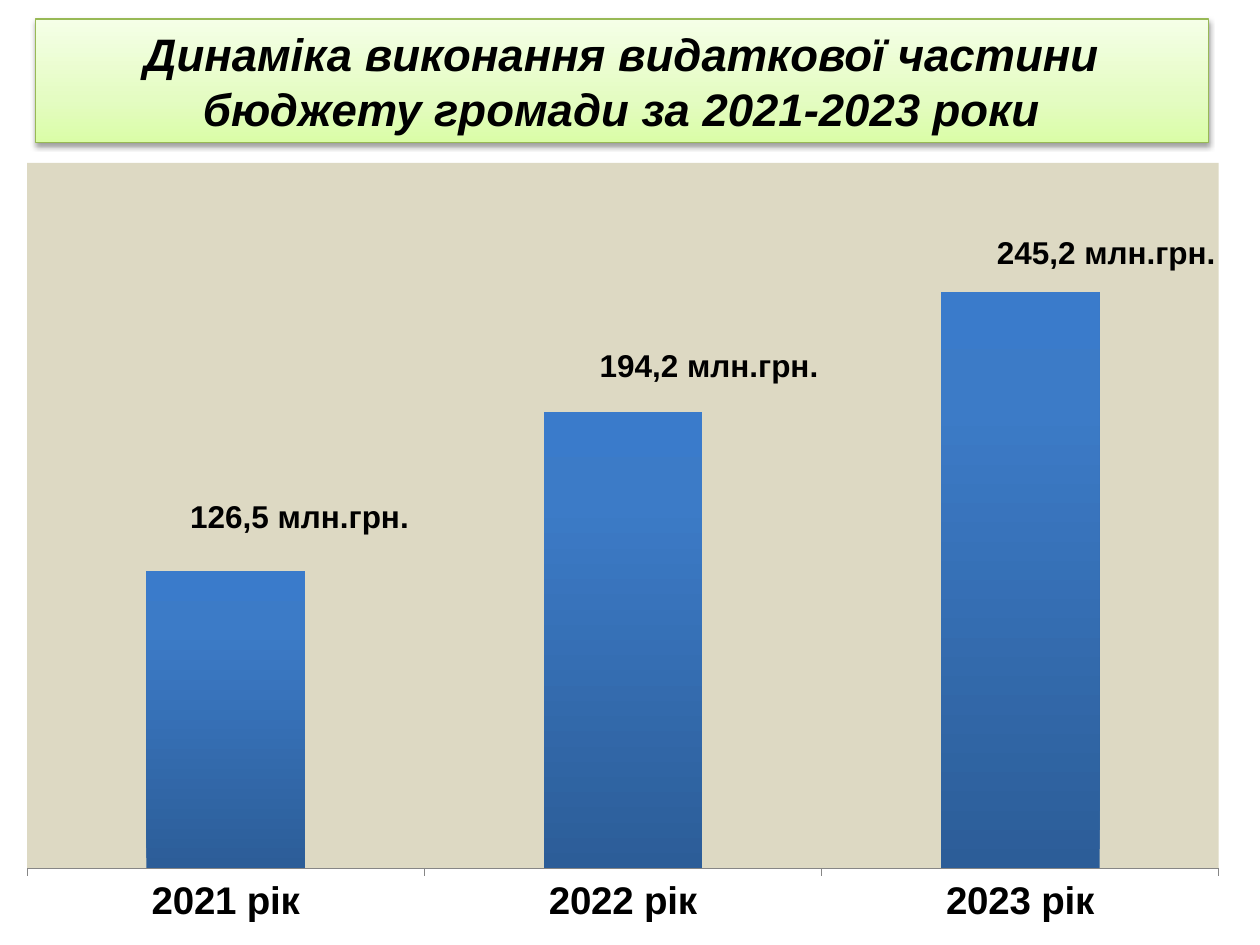
from lxml import etree
from pptx import Presentation
from pptx.chart.data import CategoryChartData
from pptx.dml.color import RGBColor
from pptx.enum.chart import XL_CHART_TYPE, XL_LABEL_POSITION, XL_TICK_MARK
from pptx.enum.shapes import MSO_SHAPE
from pptx.enum.text import MSO_ANCHOR, MSO_AUTO_SIZE, PP_ALIGN
from pptx.oxml import parse_xml
from pptx.oxml.ns import nsdecls, qn
from pptx.util import Inches, Pt

COLUMN = XL_CHART_TYPE.COLUMN_CLUSTERED
OUTSIDE_END = XL_LABEL_POSITION.OUTSIDE_END
TICK_OUT = XL_TICK_MARK.OUTSIDE
RECT = MSO_SHAPE.RECTANGLE
CENTER = PP_ALIGN.CENTER
MIDDLE = MSO_ANCHOR.MIDDLE
GROW = MSO_AUTO_SIZE.SHAPE_TO_FIT_TEXT

COLORS = {"text": "000000", "plot": "DDD9C3", "axis": "868686", "border": "98B955"}
TITLE_STOPS = [(0, "DAFDA7"), (35, "E4FCC2"), (100, "F5FFE7")]
BAR_STOPS = [(0, "2C5D98"), (80, "3C7BC7"), (100, "3A7BCB")]
# year, value, label, label shift as shares of the chart's width and height
YEARS = [("2021 рік", 126.5, "126,5 млн.грн.", 0.06, -0.04),
         ("2022 рік", 194.2, "194,2 млн.грн.", 0.07, -0.03),
         ("2023 рік", 245.2, "245,2 млн.грн.", 0.07, -0.02)]


def set_gradient(fill, sp_pr, stops):
    """Fill from the bottom edge upwards."""
    fill.gradient()
    fill.gradient_angle = 90
    gs_list = sp_pr.find(".//" + qn("a:gsLst"))
    for gs in list(gs_list):
        gs_list.remove(gs)
    for pos, color in stops:
        gs = etree.SubElement(gs_list, qn("a:gs"), pos=str(pos * 1000))
        etree.SubElement(gs, qn("a:srgbClr"), val=color)


def set_font(font, size, italic=False):
    values = {"name": "Arial", "size": Pt(size), "bold": True, "italic": italic}
    for name, value in values.items():
        setattr(font, name, value)
    font.color.rgb = RGBColor.from_string(COLORS["text"])


prs = Presentation()
prs.slide_width, prs.slide_height = Inches(10), Inches(7.5)
s = prs.slides.add_slide(prs.slide_layouts[6])

# Column chart
data = CategoryChartData(number_format="0.0")
data.categories = [year for year, *_ in YEARS]
data.add_series("Series 1", [value for _, value, *_ in YEARS])
chart = s.shapes.add_chart(COLUMN, Inches(0.06), Inches(1.25),
                           Inches(9.76), Inches(6.1), data).chart
chart.has_legend = False
chart.has_title = False
chart.font.name, chart.font.size = "Calibri", Pt(18)

# Axes
cat = chart.category_axis
cat.major_tick_mark = TICK_OUT
cat.format.line.color.rgb = RGBColor.from_string(COLORS["axis"])
set_font(cat.tick_labels.font, 22)
val = chart.value_axis
val.visible = False
val.has_major_gridlines = False
val.minimum_scale, val.maximum_scale = 0, 300

# Plot area position and background
area = chart._chartSpace.chart.plotArea
for old in area.findall(qn("c:layout")):
    area.remove(old)
area.insert(0, parse_xml(
    f'<c:layout {nsdecls("c")}><c:manualLayout><c:layoutTarget val="inner"/>'
    '<c:xMode val="edge"/><c:yMode val="edge"/><c:x val="0.016"/><c:y val="0.007"/>'
    '<c:w val="0.969"/><c:h val="0.918"/></c:manualLayout></c:layout>'))
area.append(parse_xml(
    f'<c:spPr {nsdecls("c", "a")}><a:solidFill><a:srgbClr val="{COLORS["plot"]}"/>'
    '</a:solidFill></c:spPr>'))

# Columns
plot = chart.plots[0]
plot.gap_width = 150
plot.vary_by_categories = False
series = plot.series[0]
series.invert_if_negative = False
fill = series.format.fill
set_gradient(fill, series._element.find(qn("c:spPr")), BAR_STOPS)

# Value labels, without leader lines
labels = series.data_labels
labels.show_value = True
labels.number_format, labels.number_format_is_linked = "0.0", False
set_font(labels.font, 18)
d_lbls = series._element.find(qn("c:dLbls"))
for leader in d_lbls.findall(qn("c:showLeaderLines")):
    leader.set("val", "0")
d_lbls.append(parse_xml(
    f'<c:extLst {nsdecls("c")}><c:ext uri="{{CE6537A1-D6FC-4f65-9D91-7224C49458BB}}" '
    'xmlns:c15="http://schemas.microsoft.com/office/drawing/2012/chart">'
    '<c15:showLeaderLines val="0"/></c:ext></c:extLst>'))
for i, (_, _, text, dx, dy) in enumerate(YEARS):
    label = series.points[i].data_label
    r = label.text_frame.paragraphs[0].add_run()
    r.text = text
    set_font(r.font, 18)
    label.position = OUTSIDE_END
    d_lbls.findall(qn("c:dLbl"))[i].insert(1, parse_xml(
        f'<c:layout {nsdecls("c")}><c:manualLayout><c:x val="{dx}"/>'
        f'<c:y val="{dy}"/></c:manualLayout></c:layout>'))

# Title banner
sp = s.shapes.add_shape(RECT, Inches(0.28), Inches(0.15), Inches(9.31), Inches(0.98))
set_gradient(sp.fill, sp._element.spPr, TITLE_STOPS)
sp.line.color.rgb = RGBColor.from_string(COLORS["border"])
sp.line.width = Pt(0.75)
sp.shadow.inherit = False
sp._element.spPr.find(qn("a:effectLst")).append(parse_xml(
    f'<a:outerShdw {nsdecls("a")} blurRad="{Pt(3.1)}" dist="{Pt(1.6)}" dir="5400000" '
    'rotWithShape="0"><a:srgbClr val="000000"><a:alpha val="38000"/></a:srgbClr>'
    '</a:outerShdw>'))
tf = sp.text_frame
tf.word_wrap = True
tf.auto_size = GROW
tf.vertical_anchor = MIDDLE
p = tf.paragraphs[0]
p.alignment = CENTER
r = p.add_run()
r.text = "Динаміка виконання видаткової частини бюджету громади за 2021-2023 роки"
set_font(r.font, 26, italic=True)

prs.save("out.pptx")
